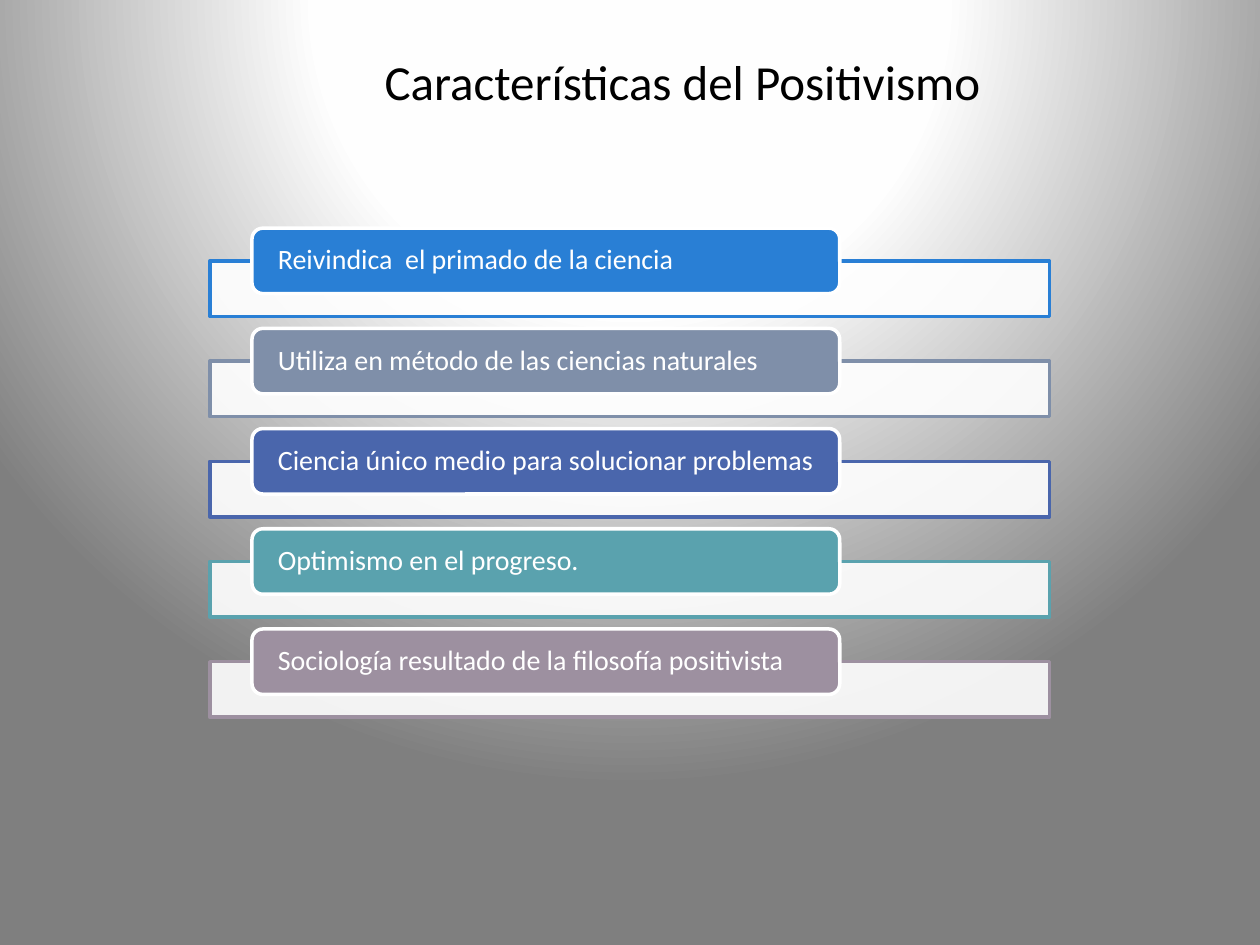
"""Build a slide listing the characteristics of positivism."""
from lxml.etree import SubElement
from pptx import Presentation
from pptx.dml.color import RGBColor
from pptx.enum.shapes import MSO_SHAPE
from pptx.enum.text import MSO_ANCHOR, PP_ALIGN
from pptx.oxml import parse_xml
from pptx.oxml.ns import nsdecls, qn
from pptx.util import Cm, Pt

COLORS = {
    "white": "FFFFFF", "near_white": "FEFEFE", "gray": "7F7F7F", "black": "000000",
    "blue": "297FD5", "slate": "7F8FA9", "indigo": "4A66AC",
    "teal": "5AA2AE", "mauve": "9D90A0",
}
CHARACTERISTICS = [
    ("Reivindica  el primado de la ciencia", "blue"),
    ("Utiliza en método de las ciencias naturales", "slate"),
    ("Ciencia único medio para solucionar problemas", "indigo"),
    ("Optimismo en el progreso.", "teal"),
    ("Sociología resultado de la filosofía positivista", "mauve"),
]
FIRST_TOP = 4.6
PITCH = 2.02


class SlideBuilder:
    """Hold the style and the current slide."""

    font = "Calibri"

    def __init__(self, slide):
        self.slide = slide

    def color(self, name):
        return RGBColor.from_string(COLORS[name])

    def background(self, stops):
        self.slide.background.fill.gradient()
        gradient = self.slide._element.find(".//" + qn("a:gradFill"))
        stop_xml = "".join(
            f'<a:gs pos="{percent * 1000}"><a:srgbClr val="{COLORS[name]}"/></a:gs>'
            for percent, name in stops
        )
        radial = parse_xml(
            f'<a:gradFill {nsdecls("a")} rotWithShape="1"><a:gsLst>{stop_xml}</a:gsLst>'
            '<a:path path="circle"><a:fillToRect l="50000" t="-80000" r="50000" b="180000"/>'
            "</a:path></a:gradFill>"
        )
        gradient.getparent().replace(gradient, radial)

    def set_text(self, frame, text, size, color):
        frame.text = text
        paragraph = frame.paragraphs[0]
        paragraph.alignment = PP_ALIGN.LEFT
        paragraph.font.name = self.font
        paragraph.font.size = Pt(size)
        paragraph.font.color.rgb = self.color(color)
        return paragraph

    def title(self, text, left, top, width, height):
        heading = self.slide.shapes.title
        heading.left, heading.top = Cm(left), Cm(top)
        heading.width, heading.height = Cm(width), Cm(height)
        self.set_text(heading.text_frame, text, 28, "black")

    def box(self, kind, left, top, width, height, fill, line):
        shape = self.slide.shapes.add_shape(kind, Cm(left), Cm(top), Cm(width), Cm(height))
        shape.shadow.inherit = False
        shape.fill.solid()
        shape.fill.fore_color.rgb = self.color(fill)
        shape.line.color.rgb = self.color(line)
        shape.line.width = Pt(2)
        return shape

    def panel(self, top, color):
        panel = self.box(MSO_SHAPE.RECTANGLE, 4.23, top, 16.93, 1.12, "white", color)
        fill_color = panel._element.spPr.find(f"{qn('a:solidFill')}/{qn('a:srgbClr')}")
        SubElement(fill_color, qn("a:alpha"), val="90000")

    def label(self, text, top, color):
        label = self.box(MSO_SHAPE.ROUNDED_RECTANGLE, 5.08, top, 11.85, 1.32, color, "white")
        frame = label.text_frame
        frame.word_wrap = True
        frame.vertical_anchor = MSO_ANCHOR.MIDDLE
        frame.margin_left, frame.margin_right = Cm(0.46), Cm(0.3)
        frame.margin_top = frame.margin_bottom = 0
        self.set_text(frame, text, 16, "white").line_spacing = 0.9


def main():
    presentation = Presentation()
    presentation.slide_width, presentation.slide_height = Cm(25.4), Cm(19.05)
    builder = SlideBuilder(presentation.slides.add_slide(presentation.slide_layouts[5]))
    builder.background([(0, "white"), (40, "near_white"), (100, "gray")])
    for index, (characteristic, color) in enumerate(CHARACTERISTICS):
        top = FIRST_TOP + index * PITCH
        builder.panel(top + 0.66, color)
        builder.label(characteristic, top, color)
    builder.title("Características del Positivismo", 7.5, 0.91, 13.2, 1.45)
    presentation.save("out.pptx")


if __name__ == "__main__":
    main()
